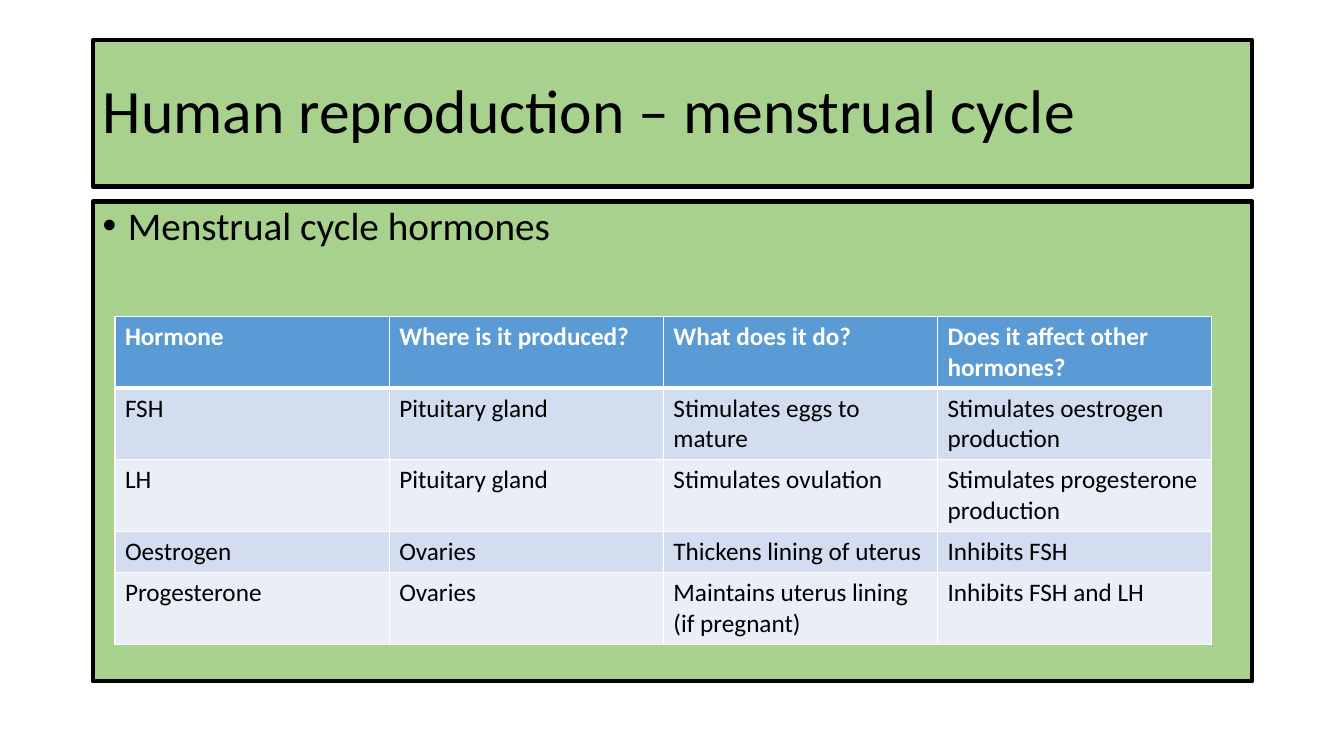
"""Builds a slide on the hormones of the menstrual cycle."""
import dataclasses

import lxml.etree
import pptx
import pptx.dml.color
import pptx.enum.shapes
import pptx.enum.text
import pptx.oxml.ns
import pptx.util

Inches = pptx.util.Inches
Pt = pptx.util.Pt
Anchor = pptx.enum.text.MSO_ANCHOR
Align = pptx.enum.text.PP_ALIGN


def tint(code):
    return pptx.dml.color.RGBColor.from_string(code)


def node(parent, tag, **attrs):
    return lxml.etree.SubElement(parent, pptx.oxml.ns.qn(tag), attrs)


@dataclasses.dataclass
class Theme:
    font: str = "Calibri"
    ink: str = "000000"
    paper: str = "FFFFFF"
    panel: str = "A9D18E"
    head: str = "5B9BD5"
    bands: tuple = ("D2DEEF", "EAEFF7")
    title: int = 44
    body: int = 28
    cell: int = 18
    edge: int = 3
    rule: int = 1


class Board:
    def __init__(self, slide, theme):
        self.slide = slide
        self.theme = theme

    def label(self, frame, text, size, color, bold=False, **form):
        para = frame.paragraphs[0]
        for name, value in form.items():
            setattr(para, name, value)
        run = para.add_run()
        run.text = text
        look = {"name": self.theme.font, "size": Pt(size), "bold": bold}
        for name, value in look.items():
            setattr(run.font, name, value)
        run.font.color.rgb = tint(color)
        return para

    def panel(self, text, size, top, height, anchor, **form):
        theme = self.theme
        box = self.slide.shapes.add_shape(
            pptx.enum.shapes.MSO_SHAPE.RECTANGLE,
            Inches(0.92), Inches(top), Inches(11.5), Inches(height))
        box.shadow.inherit = False
        box.fill.solid()
        box.fill.fore_color.rgb = tint(theme.panel)
        box.line.color.rgb = tint(theme.ink)
        box.line.width = Pt(theme.edge)
        frame = box.text_frame
        for name, value in {"word_wrap": True, "vertical_anchor": anchor}.items():
            setattr(frame, name, value)
        return self.label(frame, text, size, theme.ink,
                          alignment=Align.LEFT, line_spacing=0.9, **form)

    def bullet(self, para):
        props = para._p.get_or_add_pPr()
        indent = Inches(0.25)
        props.set("marL", str(indent))
        props.set("indent", str(-indent))
        node(props, "a:buFont", typeface="Arial")
        node(props, "a:buChar", char="•")

    def border(self, cell, widths):
        props = cell._tc.get_or_add_tcPr()
        for side, width in widths.items():
            line = node(props, "a:ln" + side, w=str(Pt(width)))
            fill = node(line, "a:solidFill")
            node(fill, "a:srgbClr", val=self.theme.paper)

    def table(self, rows, left, top, width, height):
        theme = self.theme
        count = len(rows[0])
        grid = self.slide.shapes.add_table(
            len(rows), count, Inches(left), Inches(top),
            Inches(width * count), Inches(height * len(rows))).table
        for i, row in enumerate(rows):
            first = i == 0
            fill = theme.head if first else theme.bands[(i - 1) % 2]
            color = theme.paper if first else theme.ink
            widths = dict.fromkeys("LRTB", theme.rule)
            if first:
                widths["B"] = theme.edge
            elif i == 1:
                widths["T"] = theme.edge
            for j, text in enumerate(row):
                cell = grid.cell(i, j)
                self.border(cell, widths)
                cell.fill.solid()
                cell.fill.fore_color.rgb = tint(fill)
                self.label(cell.text_frame, text, theme.cell, color, first)


def main():
    deck = pptx.Presentation()
    deck.slide_width = Inches(13.33)
    deck.slide_height = Inches(7.5)
    theme = Theme()
    board = Board(deck.slides.add_slide(deck.slide_layouts[6]), theme)
    board.panel("Human reproduction – menstrual cycle", theme.title,
                0.4, 1.45, Anchor.MIDDLE)
    para = board.panel("Menstrual cycle hormones", theme.body,
                       2, 4.76, Anchor.TOP, space_before=Pt(10))
    board.bullet(para)
    board.table([
        ("Hormone", "Where is it produced?", "What does it do?",
         "Does it affect other hormones?"),
        ("FSH", "Pituitary gland", "Stimulates eggs to mature",
         "Stimulates oestrogen production"),
        ("LH", "Pituitary gland", "Stimulates ovulation",
         "Stimulates progesterone production"),
        ("Oestrogen", "Ovaries", "Thickens lining of uterus", "Inhibits FSH"),
        ("Progesterone", "Ovaries", "Maintains uterus lining (if pregnant)",
         "Inhibits FSH and LH"),
    ], 1.14, 3.14, 2.72, 0.41)
    deck.save("out.pptx")


if __name__ == "__main__":
    main()
